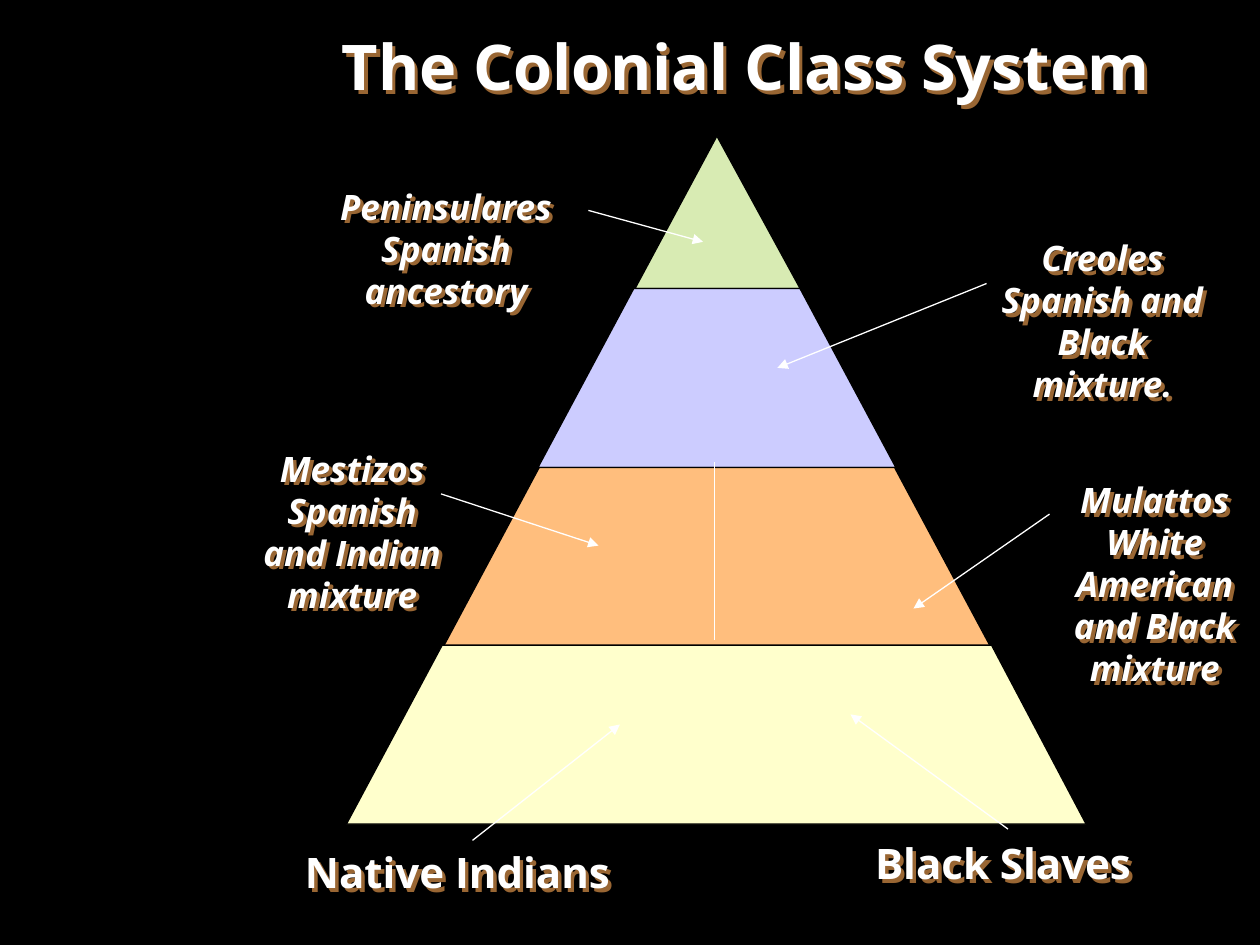
from lxml.etree import SubElement
from pptx import Presentation
from pptx.dml.color import RGBColor
from pptx.enum.shapes import MSO_CONNECTOR as Connector
from pptx.enum.text import MSO_ANCHOR as Anchor, MSO_AUTO_SIZE as AutoSize, PP_ALIGN as Align
from pptx.oxml.ns import qn
from pptx.util import Inches, Pt

WHITE, BLACK, BROWN = "FFFFFF", "000000", "996633"
APEX_X = 5.69

# Tiers: top y, bottom y, (top left, top right), (bottom left, bottom right), fill
TIERS = [
    (1.08, 2.29, (APEX_X, APEX_X), (5.04, 6.35), "D8EBB3"),
    (2.29, 3.71, (5.03, 6.35), (4.27, 7.11), "CCCCFF"),
    (3.71, 5.13, (4.28, 7.10), (3.52, 7.86), "FFBE7D"),
    (5.12, 6.54, (3.51, 7.87), (2.75, 8.62), "FFFFCC"),
]

# Class descriptions: text, box, arrow start, arrow end
CLASSES = [
    ("Peninsulares\nSpanish ancestory", (2.33, 1.42, 2.42, 1.1), (4.67, 1.67), (5.58, 1.92)),
    ("Creoles\nSpanish and Black mixture.", (7.75, 1.83, 2, 1.43), (7.83, 2.25), (6.17, 2.92)),
    ("Mestizos\nSpanish and Indian mixture", (1.92, 3.5, 1.75, 1.43), (3.5, 3.92), (4.75, 4.33)),
    ("Mulattos\nWhite American and Black mixture", (8.25, 3.75, 1.83, 1.77), (8.33, 4.08), (7.25, 4.83)),
]
BASE_CLASSES = [
    ("Native Indians", (1.92, 6.67, 3.42, 0.5), (3.75, 6.67), (4.92, 5.75)),
    ("Black Slaves", (6.42, 6.6, 3.08, 0.5), (8, 6.58), (6.75, 5.67)),
]


def color(value):
    return RGBColor.from_string(value)


def add_shadow(shape):
    """Give the text of an unfilled shape a hard shadow to the lower right."""
    effects = SubElement(shape._element.spPr, qn("a:effectLst"))
    shadow = SubElement(effects, qn("a:outerShdw"), dist="35921", dir="2700000", algn="ctr", rotWithShape="0")
    SubElement(shadow, qn("a:srgbClr"), val=BROWN)


def write_text(shape, text, box, size=20, bold=True, italic=False):
    shape.left, shape.top, shape.width, shape.height = map(Inches, box)
    shape.fill.background()
    add_shadow(shape)
    frame = shape.text_frame
    frame.word_wrap = True
    frame.auto_size = AutoSize.NONE
    frame.vertical_anchor = Anchor.TOP
    paragraph = frame.paragraphs[0]
    paragraph.text = text
    paragraph.alignment = Align.CENTER
    paragraph.line_spacing = 1.0
    for run in paragraph.runs:
        font = run.font
        font.name, font.size = "Open Sans", Pt(size)
        font.bold, font.italic = bold, italic
        font.color.rgb = color(WHITE)


def add_label(slide, text, box, **text_format):
    write_text(slide.shapes.add_textbox(0, 0, 0, 0), text, box, **text_format)


def add_tier(shapes, top, bottom, top_edge, bottom_edge, fill):
    points = [(top_edge[0], top), (top_edge[1], top), (bottom_edge[1], bottom), (bottom_edge[0], bottom)]
    points = [(Inches(x), Inches(y)) for x, y in points]
    builder = shapes.build_freeform(*points[0])
    builder.add_line_segments(points[1:], close=True)
    tier = builder.convert_to_shape()
    tier.shadow.inherit = False
    tier.fill.solid()
    tier.fill.fore_color.rgb = color(fill)
    tier.line.color.rgb = color(BLACK)
    tier.line.width = Pt(0.75)


def add_line(slide, start, end, arrow=True):
    line = slide.shapes.add_connector(Connector.STRAIGHT, *map(Inches, start + end))
    line.line.color.rgb = color(WHITE)
    line.line.width = Pt(0.75)
    if arrow:
        SubElement(line.line._get_or_add_ln(), qn("a:tailEnd"), type="triangle")
    SubElement(line._element.spPr, qn("a:effectLst"))


def main():
    presentation = Presentation()
    presentation.slide_width, presentation.slide_height = Inches(10), Inches(7.5)
    slide = presentation.slides.add_slide(presentation.slide_layouts[5])
    slide.background.fill.solid()
    slide.background.fill.fore_color.rgb = color(BLACK)

    write_text(slide.shapes.title, "The Colonial Class System", (2.17, 0.17, 7.5, 0.7), size=36)

    # Pyramid, with its third tier split in two
    pyramid = slide.shapes.add_group_shape()
    for tier in TIERS:
        add_tier(pyramid.shapes, *tier)
    add_line(slide, (5.67, 3.67), (5.67, 5.08), arrow=False)

    # Labels and their arrows
    for classes, text_format in ((CLASSES, {"italic": True}), (BASE_CLASSES, {"size": 24})):
        for text, box, start, end in classes:
            add_label(slide, text, box, **text_format)
            add_line(slide, start, end)

    presentation.save("out.pptx")


if __name__ == "__main__":
    main()
